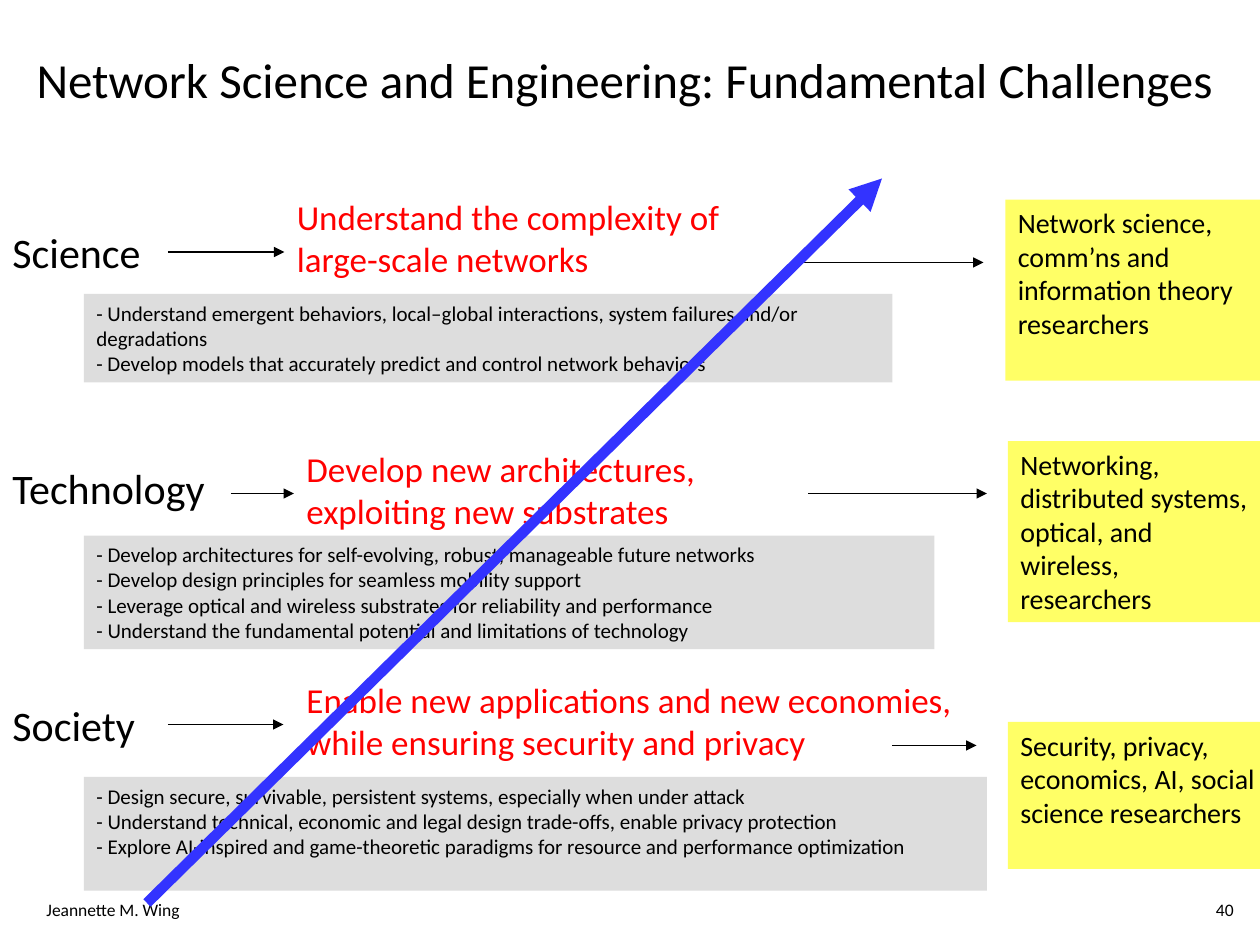
import pptx
import pptx.util
import pptx.dml.color
import pptx.enum.shapes
import pptx.enum.text
import pptx.oxml
import pptx.oxml.ns

Pt = pptx.util.Pt
RGBColor = pptx.dml.color.RGBColor
MSO = pptx.enum.shapes
ALIGN = pptx.enum.text.PP_ALIGN
ANCHOR = pptx.enum.text.MSO_ANCHOR

BLACK = RGBColor(0, 0, 0)
RED = RGBColor(0xFF, 0, 0)
GRAY = RGBColor(0xDD, 0xDD, 0xDD)
YELLOW = RGBColor(0xFF, 0xFF, 0x66)
BLUE = RGBColor(0x33, 0x33, 0xFF)

ROWS = [
    dict(
        top=108, label="Science", drop=18, left=162.5, width=303,
        goal="Understand the complexity of large-scale networks",
        tasks="- Understand emergent behaviors, local–global interactions, "
              "system failures and/or degradations\v"
              "- Develop models that accurately predict and control network behaviors",
        panel=(48, 60, 462, 50.5),
        who="Network science, comm’ns and\vinformation theory researchers",
        card=(574.5, 6, 145.5, 103.5),
        lines=[(96, 162.5, 36), (459, 562, 42)],
    ),
    dict(
        top=252, label="Technology", drop=9, left=168, width=312,
        goal="Develop new architectures, exploiting new substrates",
        tasks="- Develop architectures for self-evolving, robust, manageable future networks\v"
              "- Develop design principles for seamless mobility support\v"
              "- Leverage optical and wireless substrates for reliability and performance\v"
              "- Understand the fundamental potential and limitations of technology",
        panel=(48, 54, 486, 65),
        who="Networking, distributed systems, optical, and wireless, researchers",
        card=(576, 0, 144, 103.5),
        lines=[(132, 168, 30), (462, 564, 30)],
    ),
    dict(
        top=384, label="Society", drop=12, left=168, width=420,
        goal="Enable new applications and new economies, while ensuring security and privacy",
        tasks="- Design secure, survivable, persistent systems, especially when under attack\n"
              "- Understand technical, economic and legal design trade-offs, enable privacy protection\n"
              "- Explore AI-inspired and game-theoretic paradigms for resource and performance optimization",
        panel=(48, 60, 516, 65),
        who="Security, privacy, economics, AI, social science researchers",
        card=(576, 28.5, 150, 84),
        lines=[(96, 162, 30), (510, 558, 42)],
    ),
]


def style(shape, text, size, color=BLACK, align=ALIGN.LEFT, anchor=ANCHOR.TOP):
    frame = shape.text_frame
    frame.text = text
    frame.word_wrap = True
    frame.vertical_anchor = anchor
    for para in frame.paragraphs:
        para.alignment = align
        for run in para.runs:
            run.font.name = "Calibri"
            run.font.size = Pt(size)
            run.font.color.rgb = color


def add_text(slide, box, text, size, color=BLACK, align=ALIGN.LEFT):
    shape = slide.shapes.add_textbox(*map(Pt, box))
    style(shape, text, size, color, align)


def add_panel(slide, box, text, size, fill):
    shape = slide.shapes.add_shape(MSO.MSO_SHAPE.RECTANGLE, *map(Pt, box))
    shape.shadow.inherit = False
    shape.fill.solid()
    shape.fill.fore_color.rgb = fill
    shape.line.fill.background()
    style(shape, text, size)


def add_arrow(slide, ends, color=BLACK, width=0.75):
    line = slide.shapes.add_connector(MSO.MSO_CONNECTOR.STRAIGHT, *map(Pt, ends))
    line.line.color.rgb = color
    line.line.width = Pt(width)
    head = pptx.oxml.parse_xml(
        '<a:tailEnd %s type="triangle"/>' % pptx.oxml.ns.nsdecls("a"))
    line.line._get_or_add_ln().append(head)
    bare = pptx.oxml.parse_xml('<a:effectLst %s/>' % pptx.oxml.ns.nsdecls("a"))
    line._element.spPr.append(bare)


def add_title(slide, box):
    title = slide.shapes.title
    title.left, title.top, title.width, title.height = map(Pt, box)
    style(title, "Network Science and Engineering: Fundamental Challenges ",
          28, align=ALIGN.CENTER, anchor=ANCHOR.MIDDLE)


def add_row(slide, row):
    top = row["top"]

    def place(box):
        left, drop, width, height = box
        return left, top + drop, width, height

    add_text(slide, place((0, row["drop"], 162, 36)), row["label"], 24)
    add_text(slide, place((row["left"], 0, row["width"], 55.5)), row["goal"], 20, RED)
    add_panel(slide, place(row["panel"]), row["tasks"], 12, GRAY)
    add_panel(slide, place(row["card"]), row["who"], 16, YELLOW)
    for start, end, drop in row["lines"]:
        add_arrow(slide, (start, top + drop, end, top + drop))


def add_footer(slide, top, height):
    add_text(slide, (19.5, top, 150, height), "Jeannette M. Wing", 10)
    add_text(slide, (497.5, top, 214.5, height), "40", 10, align=ALIGN.RIGHT)


def main():
    deck = pptx.Presentation()
    deck.slide_width, deck.slide_height = Pt(720), Pt(540)
    slide = deck.slides.add_slide(deck.slide_layouts[5])
    add_title(slide, (-18, 0, 756, 90))
    add_footer(slide, 510, 24)
    for row in ROWS:
        add_row(slide, row)
    add_arrow(slide, (84, 516, 504, 102), BLUE, 6)
    deck.save("out.pptx")


if __name__ == "__main__":
    main()
